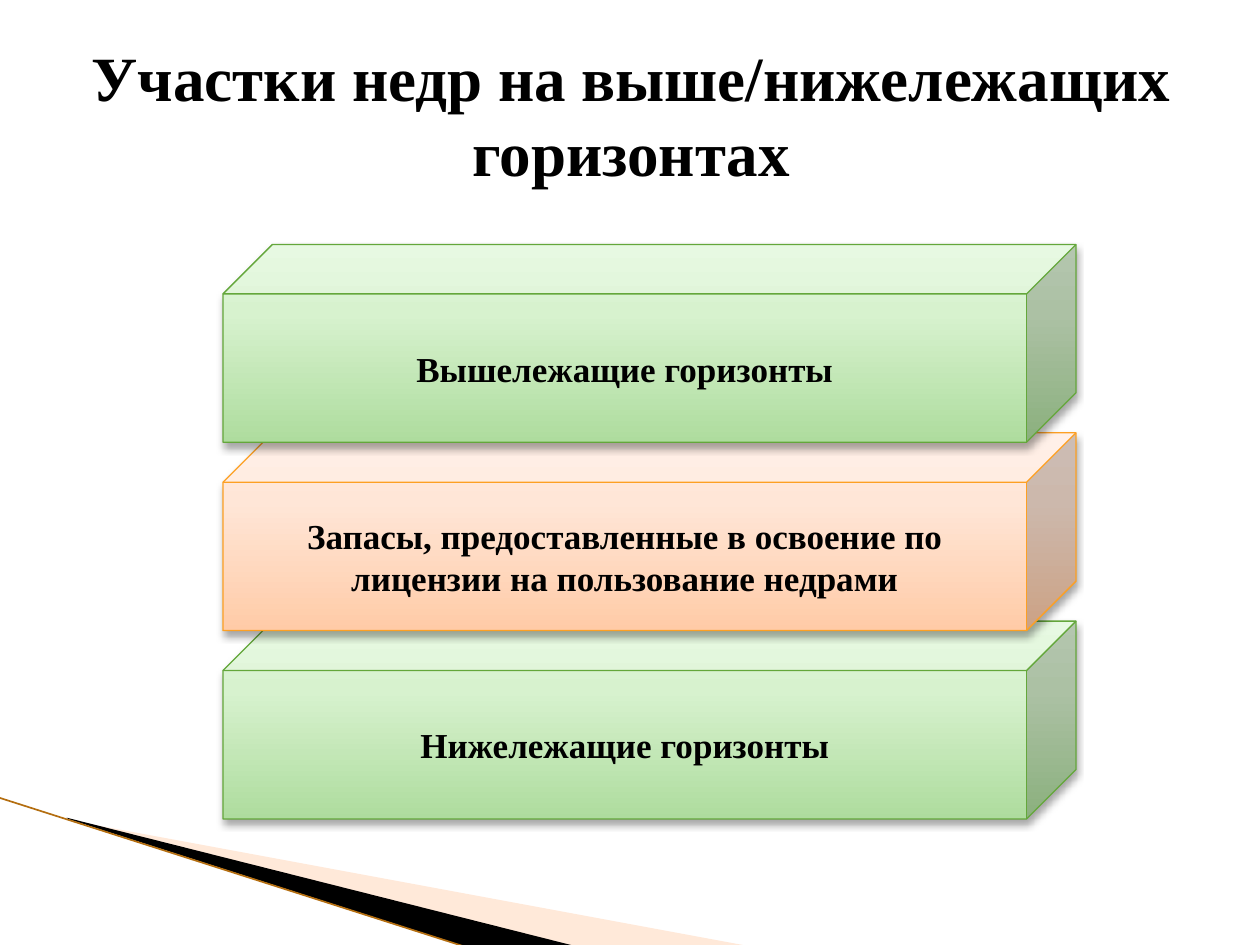
import pptx
import pptx.dml.color
import pptx.enum.shapes
import pptx.enum.text
import pptx.oxml
import pptx.oxml.ns
import pptx.util
from copy import deepcopy

Inches = pptx.util.Inches
Pt = pptx.util.Pt
RGBColor = pptx.dml.color.RGBColor
qn = pptx.oxml.ns.qn

BLACK = RGBColor(0x00, 0x00, 0x00)
PEACH = RGBColor(0xFF, 0xC8, 0xA2)
BROWN = RGBColor(0xB4, 0x6E, 0x10)
GREEN_LINE = RGBColor(0x64, 0xA7, 0x3B)
ORANGE_LINE = RGBColor(0xFD, 0xA0, 0x23)
GREENS = [RGBColor(0xAE, 0xDC, 0x9E), RGBColor(0xD7, 0xF2, 0xCE), RGBColor(0xE2, 0xF8, 0xDB)]
ORANGES = [RGBColor(0xFF, 0xCB, 0xA7), RGBColor(0xFF, 0xE6, 0xD7), RGBColor(0xFF, 0xED, 0xE3)]
STOP_POSITIONS = [0, 0.65, 1]

SHADOW = (
    f'<a:effectLst {pptx.oxml.ns.nsdecls("a")}>'
    f'<a:outerShdw blurRad="{Pt(4)}" dist="{Pt(3)}" dir="5400000" rotWithShape="0">'
    '<a:srgbClr val="000000"><a:alpha val="35000"/></a:srgbClr>'
    '</a:outerShdw></a:effectLst>'
)


def write_centred(shape, text, size):
    frame = shape.text_frame
    frame.word_wrap = True
    frame.auto_size = pptx.enum.text.MSO_AUTO_SIZE.NONE
    frame.vertical_anchor = pptx.enum.text.MSO_ANCHOR.MIDDLE
    paragraph = frame.paragraphs[0]
    paragraph.text = text
    paragraph.alignment = pptx.enum.text.PP_ALIGN.CENTER
    font = paragraph.runs[0].font
    for name, value in {"name": "Times New Roman", "size": Pt(size), "bold": True}.items():
        setattr(font, name, value)
    font.color.rgb = BLACK


presentation = pptx.Presentation()
presentation.slide_width = Inches(10)
presentation.slide_height = Inches(7.5)
slide = presentation.slides.add_slide(presentation.slide_layouts[5])

# Corner wedges
wedges = [
    ([(0.55, 6.51), (5.95, 7.51), (4.56, 7.51), (0.55, 6.5)], PEACH, 40),
    ([(0.53, 6.49), (4.57, 7.51), (3.72, 7.52), (0.54, 6.5)], BLACK, 100),
]
for points, color, opacity in wedges:
    corners = [(Inches(x), Inches(y)) for x, y in points]
    builder = slide.shapes.build_freeform(*corners[0])
    builder.add_line_segments(corners[1:], close=True)
    wedge = builder.convert_to_shape()
    wedge.shadow.inherit = False
    wedge.line.fill.background()
    wedge.fill.solid()
    wedge.fill.fore_color.rgb = color
    if opacity < 100:
        color_element = wedge.element.spPr.find(qn("a:solidFill"))[0]
        alpha = pptx.oxml.parse_xml(
            f'<a:alpha {pptx.oxml.ns.nsdecls("a")} val="{opacity * 1000}"/>')
        color_element.append(alpha)

edge = slide.shapes.add_connector(
    pptx.enum.shapes.MSO_CONNECTOR.STRAIGHT,
    Inches(-0.01), Inches(6.33), Inches(3.71), Inches(7.52))
edge.line.color.rgb = BROWN
edge.line.width = Pt(0.95)
edge.element.spPr.append(
    pptx.oxml.parse_xml(f'<a:effectLst {pptx.oxml.ns.nsdecls("a")}/>'))

# Stacked layers, lowest first so that each one covers the next
layers = [
    ("Нижележащие горизонты", GREENS, GREEN_LINE),
    ("Запасы, предоставленные в освоение по лицензии на пользование недрами",
     ORANGES, ORANGE_LINE),
    ("Вышележащие горизонты", GREENS, GREEN_LINE),
]
for index, (text, colors, line_color) in enumerate(layers):
    layer = slide.shapes.add_shape(
        pptx.enum.shapes.MSO_SHAPE.CUBE,
        Inches(1.77), Inches(4.93 - 1.495 * index), Inches(6.77), Inches(1.57))
    layer.fill.gradient()
    layer.fill.gradient_angle = 90
    stop_list = layer.element.spPr.find(qn("a:gradFill")).find(qn("a:gsLst"))
    stop_list.append(deepcopy(stop_list[-1]))
    for stop, color, position in zip(layer.fill.gradient_stops, colors, STOP_POSITIONS):
        stop.color.rgb = color
        stop.position = position
    layer.line.color.rgb = line_color
    layer.line.width = Pt(0.75)
    layer.element.spPr.append(pptx.oxml.parse_xml(SHADOW))
    write_centred(layer, text, 20)

title = slide.shapes.title
title_box = {"left": 0.51, "top": 0.36, "width": 9, "height": 1.09}
for name, value in title_box.items():
    setattr(title, name, Inches(value))
write_centred(title, "Участки недр на выше/нижележащих горизонтах", 36)

presentation.save("out.pptx")
